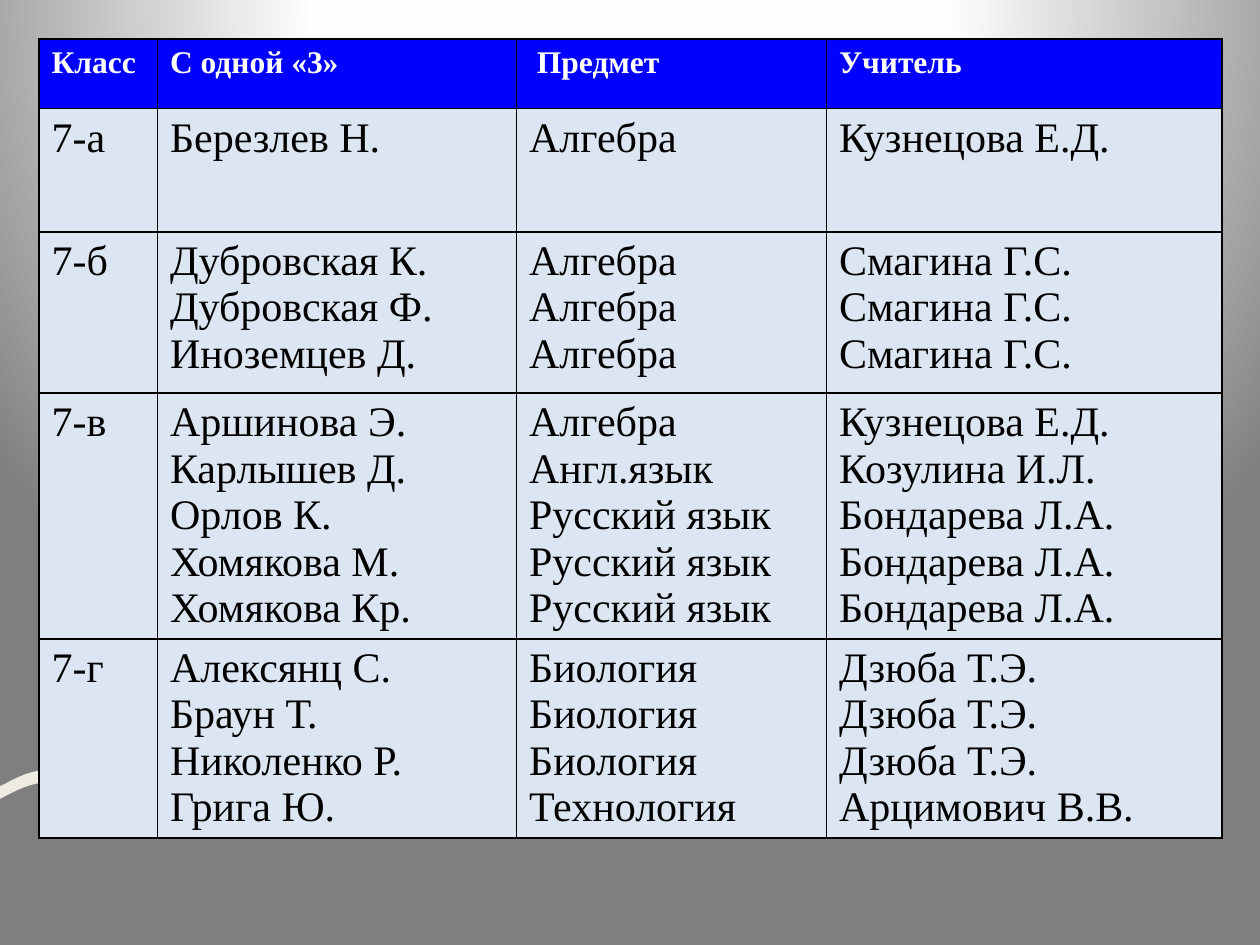
from dataclasses import dataclass
from math import cos, pi

from lxml import etree
from pptx import Presentation
from pptx.dml.color import RGBColor
from pptx.oxml import parse_xml
from pptx.oxml.ns import nsdecls, qn
from pptx.util import Inches, Pt


@dataclass(frozen=True)
class Theme:
    font: str = "Times New Roman"
    header_size: int = 18
    body_size: int = 24
    border_points: int = 1
    header_fill: str = "0000FF"
    header_text: str = "FFFFFF"
    body_fill: str = "DCE6F2"
    body_text: str = "000000"
    border: str = "000000"
    wave: str = "EEECE1"
    glow_stops: tuple = ((0, "FFFFFF"), (40, "FEFEFE"), (100, "7F7F7F"))


THEME = Theme()

# Wave ribbon, in inches: a cosine centre line with a constant thickness
WAVE_LENGTH = 4.35
WAVE_STEP = 0.05
WAVE_MIDDLE = 6.28
WAVE_HEIGHT = 0.12
WAVE_PERIOD = 1.44
WAVE_FIRST_CREST = 0.38
WAVE_THICKNESS = 0.1

# Table, in inches
TABLE_LEFT = TABLE_TOP = 0.31
COLUMN_WIDTHS = [0.94, 2.85, 2.46, 3.14]
ROW_HEIGHTS = [0.55, 0.98, 1.28, 1.95, 1.58]
ROWS = [
    [["Класс"], ["С одной «3»"], [" Предмет"], ["Учитель"]],
    [["7-а"], ["Березлев Н."], ["Алгебра"], ["Кузнецова Е.Д."]],
    [["7-б"], ["Дубровская К.", "Дубровская Ф.", "Иноземцев Д."],
     ["Алгебра"] * 3, ["Смагина Г.С."] * 3],
    [["7-в"], ["Аршинова Э.", "Карлышев Д.", "Орлов К.", "Хомякова М.", "Хомякова Кр."],
     ["Алгебра", "Англ.язык"] + ["Русский язык"] * 3,
     ["Кузнецова Е.Д.", "Козулина И.Л."] + ["Бондарева Л.А."] * 3],
    [["7-г"], ["Алексянц С.", "Браун Т. Николенко Р.", "Грига Ю."],
     ["Биология"] * 3 + ["Технология"], ["Дзюба Т.Э."] * 3 + ["Арцимович В.В."]],
]


def wave_center(x):
    """Return the height of the ribbon's centre line at x; crests point up."""
    return WAVE_MIDDLE - WAVE_HEIGHT * cos(2 * pi * (x - WAVE_FIRST_CREST) / WAVE_PERIOD)


def add_borders(cell):
    properties = cell._tc.get_or_add_tcPr()
    for side in ("lnL", "lnR", "lnT", "lnB"):
        line = etree.SubElement(properties, qn(f"a:{side}"), w=str(Pt(THEME.border_points)))
        paint = etree.SubElement(line, qn("a:solidFill"))
        etree.SubElement(paint, qn("a:srgbClr"), val=THEME.border)


deck = Presentation()
deck.slide_width = Inches(10)
deck.slide_height = Inches(7.5)
page = deck.slides.add_slide(deck.slide_layouts[6])

# Background glow from above the top edge
stops = "".join(
    f'<a:gs pos="{place * 1000}"><a:srgbClr val="{color}"/></a:gs>'
    for place, color in THEME.glow_stops
)
page._element.cSld.insert(0, parse_xml(
    f'<p:bg {nsdecls("p", "a")}><p:bgPr><a:gradFill rotWithShape="1">'
    f'<a:gsLst>{stops}</a:gsLst><a:path path="circle">'
    '<a:fillToRect l="50000" t="-80000" r="50000" b="180000"/></a:path>'
    '</a:gradFill><a:effectLst/></p:bgPr></p:bg>'
))

# Wave behind the table: along the upper edge, then back along the lower one
step_count = round(WAVE_LENGTH / WAVE_STEP)
stations = [index * WAVE_STEP for index in range(step_count + 1)]
upper_edge = [(x, wave_center(x) - WAVE_THICKNESS / 2) for x in stations]
lower_edge = [(x, wave_center(x) + WAVE_THICKNESS / 2) for x in reversed(stations)]
outline = [(Inches(x), Inches(y)) for x, y in upper_edge + lower_edge]
builder = page.shapes.build_freeform(*outline[0])
builder.add_line_segments(outline[1:], close=True)
wave = builder.convert_to_shape()
wave.shadow.inherit = False
wave.fill.solid()
wave.fill.fore_color.rgb = RGBColor.from_string(THEME.wave)
wave.line.fill.background()

# Table of pupils
frame = page.shapes.add_table(
    len(ROWS), len(COLUMN_WIDTHS), Inches(TABLE_LEFT), Inches(TABLE_TOP),
    Inches(sum(COLUMN_WIDTHS)), Inches(sum(ROW_HEIGHTS)),
)
table = frame.table
table.first_row = False
table.horz_banding = False
for column, width in zip(table.columns, COLUMN_WIDTHS):
    column.width = Inches(width)
for row, height in zip(table.rows, ROW_HEIGHTS):
    row.height = Inches(height)

for row_index, entries in enumerate(ROWS):
    is_header = row_index == 0
    fill_color = THEME.header_fill if is_header else THEME.body_fill
    text_color = THEME.header_text if is_header else THEME.body_text
    size = THEME.header_size if is_header else THEME.body_size
    for column_index, lines in enumerate(entries):
        cell = table.cell(row_index, column_index)
        add_borders(cell)
        cell.fill.solid()
        cell.fill.fore_color.rgb = RGBColor.from_string(fill_color)
        box = cell.text_frame
        for line_index, text in enumerate(lines):
            para = box.add_paragraph() if line_index else box.paragraphs[0]
            span = para.add_run()
            span.text = text
            span.font.name = THEME.font
            span.font.size = Pt(size)
            span.font.bold = is_header
            span.font.color.rgb = RGBColor.from_string(text_color)

deck.save("out.pptx")
